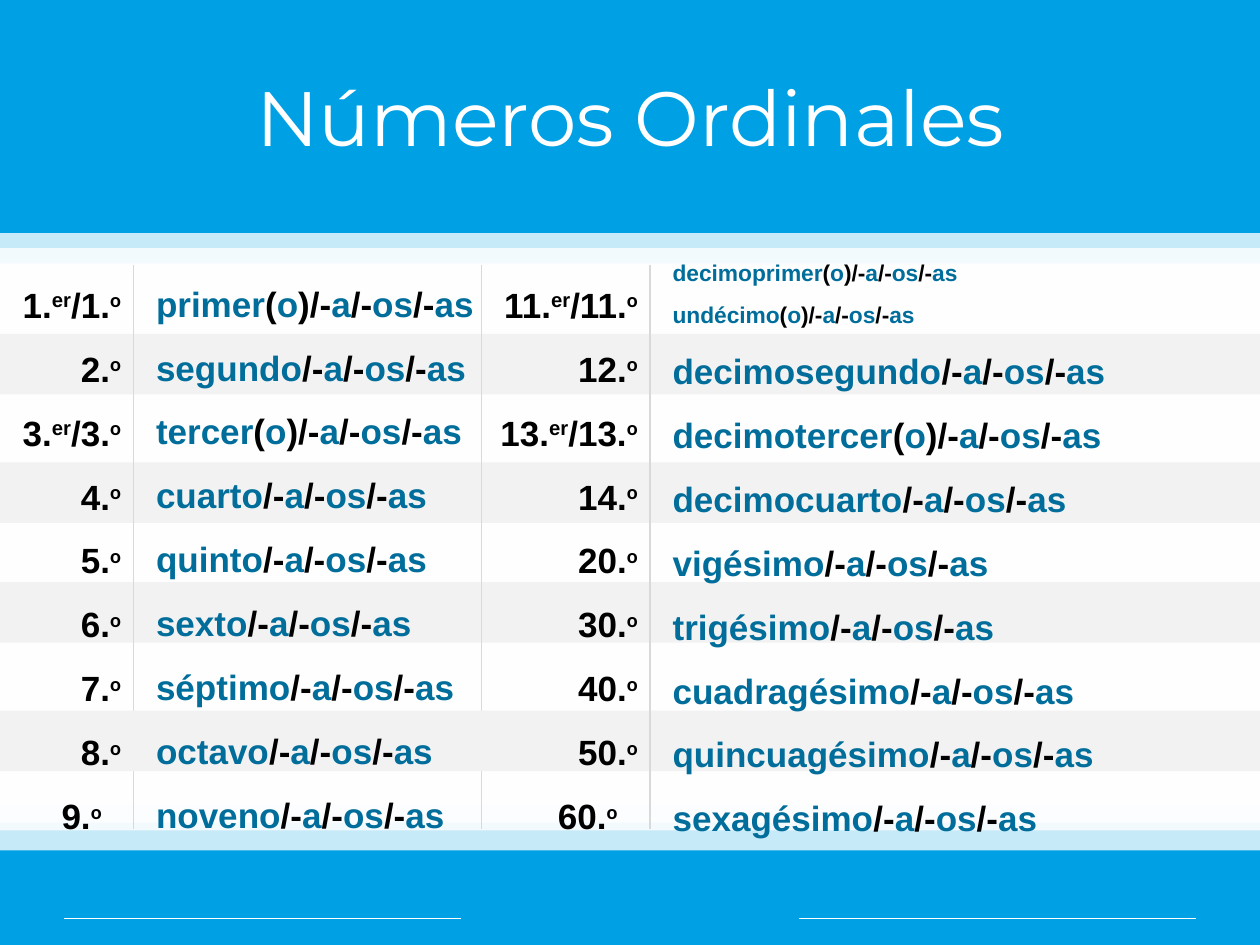
from itertools import groupby

from lxml import etree
from pptx import Presentation
from pptx.dml.color import RGBColor
from pptx.enum.shapes import MSO_CONNECTOR, MSO_SHAPE
from pptx.enum.text import MSO_ANCHOR, MSO_AUTO_SIZE, PP_ALIGN
from pptx.oxml import parse_xml
from pptx.oxml.ns import nsdecls, qn
from pptx.util import Inches, Pt

COLORS = {"blue": "00A1E4", "white": "FFFFFF", "band": "F2F2F2",
          "rule": "D9D9D9", "word": "006D9B", "black": "000000"}
LAYERS = [(2.09, 0.71), (1.97, 0.71), (1.85, 0.51), (2.95, 3.58), (2.1, 4.09),
          (2.53, 3.38), (5.83, 0.92), (5.67, 0.92), (2.2, 4.18)]
ENDINGS = "/-a/-os/-as"
LOW_NUMBERS = ["1.er/1.o", "2.o", "3.er/3.o", "4.o", "5.o", "6.o", "7.o", "8.o", "9.o"]
HIGH_NUMBERS = ["11.er/11.o", "12.o", "13.er/13.o", "14.o", "20.o", "30.o",
                "40.o", "50.o", "60.o"]
LOW_WORDS = ["primer(o)", "segundo", "tercer(o)", "cuarto", "quinto", "sexto",
             "séptimo", "octavo", "noveno"]
HIGH_WORDS = ["decimoprimer(o)", "undécimo(o)".replace("(o)", "") + "(o)",
              "decimosegundo", "decimotercer(o)", "decimocuarto", "vigésimo",
              "trigésimo", "cuadragésimo", "quincuagésimo", "sexagésimo"]
HIGH_WORDS[1] = "undécimo(o)"


def color(name):
    return RGBColor.from_string(COLORS[name])


def add_band(slide, top, height, fill, opacity=None):
    band = slide.shapes.add_shape(MSO_SHAPE.RECTANGLE, 0, Inches(top),
                                  Inches(10), Inches(height))
    band.shadow.inherit = False
    band.fill.solid()
    band.fill.fore_color.rgb = color(fill)
    band.line.fill.background()
    if opacity:
        tint = band.fill._xPr.find(qn("a:solidFill"))[0]
        tint.append(parse_xml(f'<a:alpha {nsdecls("a")} val="{opacity * 1000}"/>'))


def add_rule(slide, x1, y1, x2, y2, stroke, weight):
    rule = slide.shapes.add_connector(MSO_CONNECTOR.STRAIGHT, Inches(x1), Inches(y1),
                                      Inches(x2), Inches(y2))
    rule.line.color.rgb = color(stroke)
    rule.line.width = Pt(weight)
    etree.SubElement(rule._element.spPr, qn("a:effectLst"))


def add_title(slide, left, top, width, height):
    title = slide.shapes.title
    title.left, title.top = Inches(left), Inches(top)
    title.width, title.height = Inches(width), Inches(height)
    title.text_frame.text = "Números Ordinales"
    title.text_frame.vertical_anchor = MSO_ANCHOR.MIDDLE
    heading = title.text_frame.paragraphs[0]
    heading.alignment = PP_ALIGN.CENTER
    heading.font.name = "Montserrat"
    heading.font.size = Pt(44)
    heading.font.color.rgb = color("white")


def add_column(slide, left, top, width, height):
    column = slide.shapes.add_textbox(Inches(left), Inches(top),
                                      Inches(width), Inches(height)).text_frame
    column.word_wrap = True
    column.auto_size = MSO_AUTO_SIZE.SHAPE_TO_FIT_TEXT
    return column


def add_row(column, index, size=20):
    row = column.add_paragraph() if index else column.paragraphs[0]
    row.line_spacing = 1.3
    if index:
        row.space_before = Pt(round(size * 0.265, 1))
    row.font.name = "Arial"
    row.font.size = Pt(size)
    row.font.bold = True
    return row


def add_numbers(slide, left, top, width, height, numbers, last_indent):
    column = add_column(slide, left, top, width, height)
    for index, number in enumerate(numbers):
        row = add_row(column, index)
        row.alignment = PP_ALIGN.RIGHT
        row.font.color.rgb = color("black")
        for raised, letters in groupby(number, str.isalpha):
            part = row.add_run()
            part.text = "".join(letters)
            if raised:
                part._r.get_or_add_rPr().set("baseline", "30000")
            if part.text == "o":
                part.font.name = "Calibri"
    row.alignment = PP_ALIGN.LEFT
    row._p.get_or_add_pPr().set("marL", str(Inches(last_indent)))


def add_words(slide, left, top, width, height, words, small_rows=0):
    column = add_column(slide, left, top, width, height)
    for index, word in enumerate(words):
        row = add_row(column, index, 13 if index < small_rows else 20)
        for is_word, letters in groupby(word + ENDINGS, str.isalpha):
            part = row.add_run()
            part.text = "".join(letters)
            part.font.color.rgb = color("word" if is_word else "black")


def add_backdrop(slide):
    slide.background.fill.solid()
    slide.background.fill.fore_color.rgb = color("blue")
    for left in (0.51, 6.34):
        add_rule(slide, left, 7.29, left + 3.15, 7.29, "white", 0.25)
    for top, height in LAYERS:
        add_band(slide, top, height, "white", opacity=78)


def add_ordinals(slide, top, height):
    for offset in (0.55, 1.57, 2.52):
        add_band(slide, top + offset, 0.48, "band")
    for x in (1.06, 3.82):
        add_rule(slide, x, top, x, top + height, "rule", 0.75)
    add_band(slide, top + 3.54, 0.48, "band")
    add_rule(slide, 5.16, top, 5.16, top + height, "rule", 0.75)
    add_numbers(slide, 0, top, 1.06, 4.58, LOW_NUMBERS, 0.39)
    add_words(slide, 1.14, top - 0.01, 2.76, 4.58, LOW_WORDS)
    add_numbers(slide, 3.82, top, 1.34, 4.58, HIGH_NUMBERS, 0.51)
    add_words(slide, 5.24, top - 0.16, 4.57, 4.85, HIGH_WORDS, small_rows=2)


def main():
    prs = Presentation()
    prs.slide_width, prs.slide_height = Inches(10), Inches(7.5)
    slide = prs.slides.add_slide(prs.slide_layouts[5])
    add_backdrop(slide)
    add_title(slide, 0.2, 0.21, 9.61, 1.42)
    add_ordinals(slide, 2.1, 4.48)
    prs.save("out.pptx")


if __name__ == "__main__":
    main()
